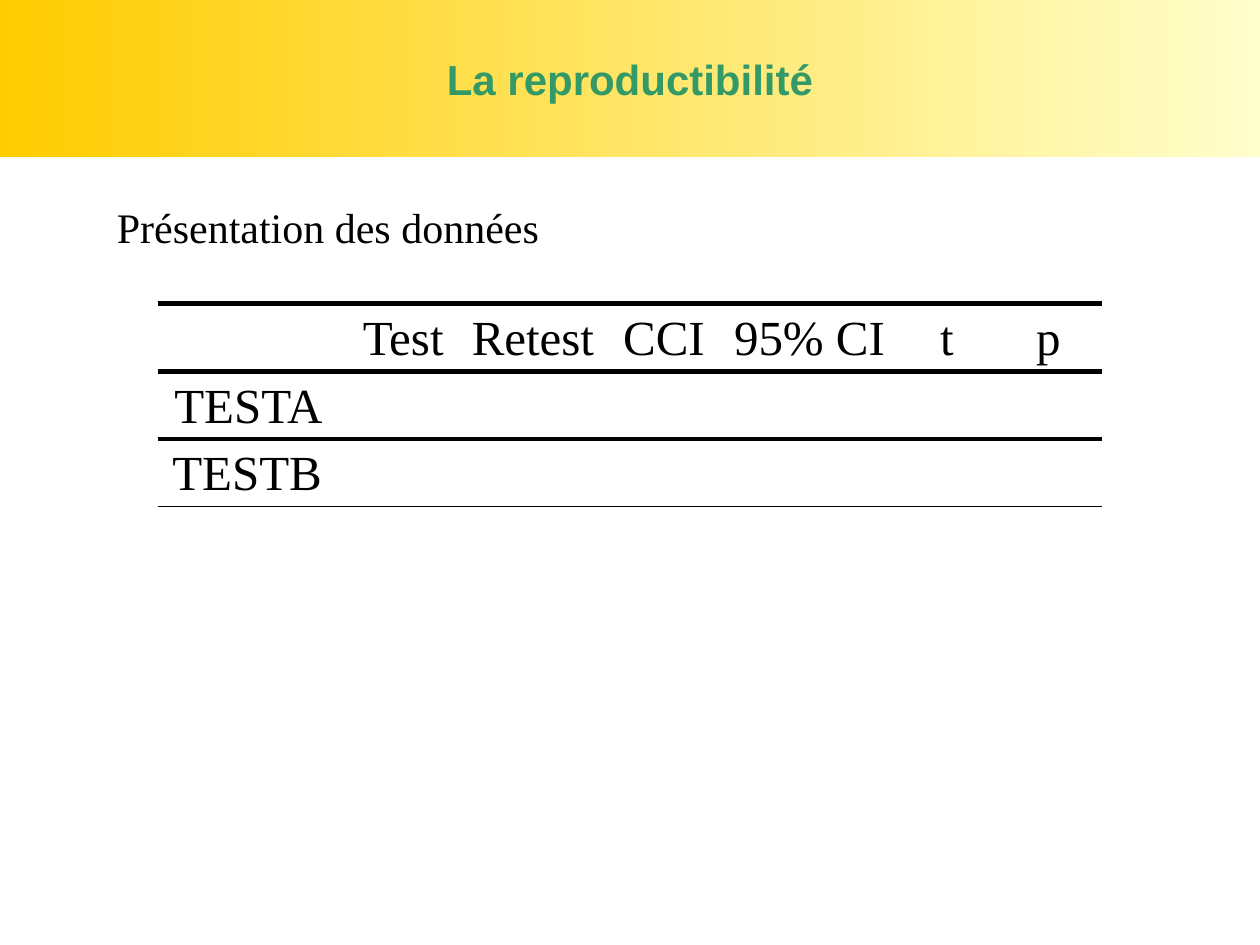
from lxml.etree import SubElement
from pptx import Presentation
from pptx.dml.color import RGBColor
from pptx.enum.text import MSO_ANCHOR, PP_ALIGN
from pptx.oxml.ns import qn
from pptx.util import Inches, Pt

BLACK = RGBColor(0x00, 0x00, 0x00)
WHITE = RGBColor(0xFF, 0xFF, 0xFF)
GREEN = RGBColor(0x33, 0x99, 0x66)
GOLD = RGBColor(0xFF, 0xCC, 0x00)
CREAM = RGBColor(0xFF, 0xFF, 0xCC)
NO_STYLE = "{2D5ABB26-0587-4C30-8999-92F81FD0307C}"


def format_text(paragraph, font_name, size, color):
    paragraph.font.name = font_name
    paragraph.font.size = Pt(size)
    paragraph.font.color.rgb = color


def add_border(cell, side, width):
    line = SubElement(cell._tc.get_or_add_tcPr(), qn(f"a:{side}"), w=str(Pt(width)))
    fill = SubElement(line, qn("a:solidFill"))
    SubElement(fill, qn("a:srgbClr"), val=str(BLACK))


deck = Presentation()
deck.slide_width = Inches(10)
deck.slide_height = Inches(7.5)
page = deck.slides.add_slide(deck.slide_layouts[5])

# Title band
title = page.shapes.title
title.left, title.top = Inches(0), Inches(0)
title.width, title.height = Inches(10), Inches(1.25)
title.fill.gradient()
title.fill.gradient_angle = 0
for stop, color in zip(title.fill.gradient_stops, (GOLD, CREAM)):
    stop.color.rgb = color
title.text_frame.text = "La reproductibilité"
title.text_frame.vertical_anchor = MSO_ANCHOR.MIDDLE
heading = title.text_frame.paragraphs[0]
heading.alignment = PP_ALIGN.CENTER
heading.font.bold = True
format_text(heading, "Arial", 24, GREEN)

# Subtitle
box = page.shapes.add_textbox(Inches(0.83), Inches(1.55), Inches(8.5), Inches(0.5))
box.text_frame.word_wrap = True
box.text_frame.text = "Présentation des données"
format_text(box.text_frame.paragraphs[0], "Times New Roman", 24, BLACK)

# Results table
rows = [
    ["", "Test", "Retest", "CCI", "95% CI", "t", "p"],
    ["TESTA ", "", "", "", "", "", ""],
    ["TESTB ", "", "", "", "", "", ""],
]
column_widths = [1.52, 0.86, 1.2, 0.88, 1.43, 0.75, 0.86]
row_heights = [0.4, 0.4, 0.42]
# Border side and width in points, for each row
row_borders = [
    [("lnT", 3), ("lnB", 3)],
    [("lnT", 3)],
    [("lnB", 1)],
]

table = page.shapes.add_table(
    len(rows), len(column_widths),
    Inches(1.25), Inches(2.41), Inches(7.5), Inches(1.22),
).table
table.first_row = False
table.horz_banding = False
table._tbl.tblPr.find(qn("a:tableStyleId")).text = NO_STYLE
for column, width in zip(table.columns, column_widths):
    column.width = Inches(width)
for row, height, texts, borders in zip(table.rows, row_heights, rows, row_borders):
    row.height = Inches(height)
    for cell, text in zip(row.cells, texts):
        for side, width in borders:
            add_border(cell, side, width)
        cell.fill.solid()
        cell.fill.fore_color.rgb = WHITE
        cell.margin_left = cell.margin_right = Inches(0.07)
        cell.margin_top = cell.margin_bottom = Inches(0)
        if text:
            cell.text = text
            paragraph = cell.text_frame.paragraphs[0]
            paragraph.alignment = PP_ALIGN.CENTER
            paragraph.line_spacing = 1.15
            format_text(paragraph, "Times New Roman", 28, BLACK)

deck.save("out.pptx")
